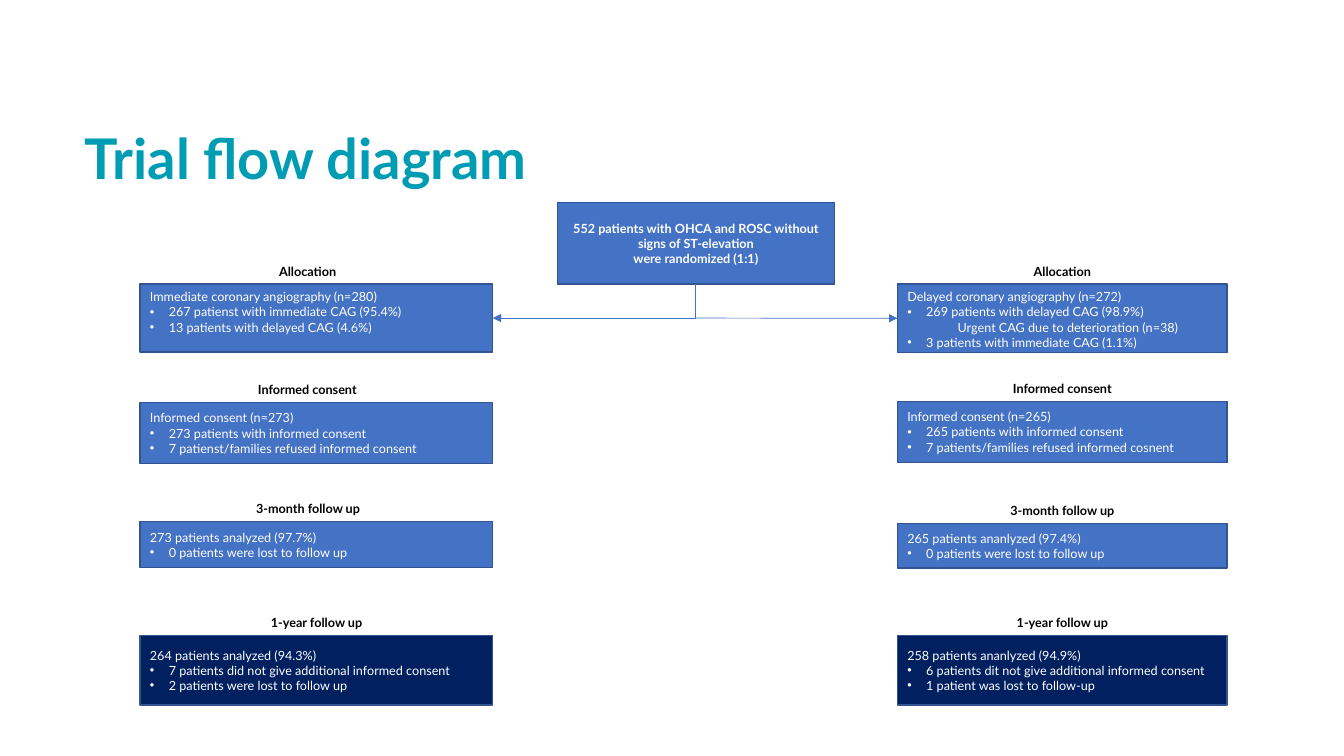
"""Build the trial flow diagram slide."""
from pptx import Presentation
from pptx.dml.color import RGBColor
from pptx.enum.shapes import MSO_CONNECTOR, MSO_SHAPE
from pptx.enum.text import MSO_ANCHOR, MSO_AUTO_SIZE, PP_ALIGN
from pptx.oxml.ns import qn
from pptx.util import Pt
from lxml.etree import SubElement

TEAL = RGBColor(0x00, 0x9C, 0xB4)
BLUE = RGBColor(0x44, 0x72, 0xC4)
EDGE = RGBColor(0x32, 0x54, 0x91)
NAVY = RGBColor(0x00, 0x20, 0x60)
WHITE = RGBColor(0xFF, 0xFF, 0xFF)
BLACK = RGBColor(0x00, 0x00, 0x00)

TITLE = "Trial flow diagram"
TITLE_AREA = (53.3, 86.4, 847.4, 58.3)
ROOT_AREA = (398, 144.7, 198, 58.3)
ROOT_LINES = [
    ("plain", "552 patients with OHCA and ROSC without signs of ST-elevation"),
    ("plain", "were randomized (1:1)"),
]
STAGES = [
    ("Allocation", BLUE, MSO_ANCHOR.TOP),
    ("Informed consent", BLUE, MSO_ANCHOR.MIDDLE),
    ("3-month follow up", BLUE, MSO_ANCHOR.MIDDLE),
    ("1-year follow up", NAVY, MSO_ANCHOR.MIDDLE),
]
ARMS = [
    {
        "left": 100, "width": 252,
        "boxes": [
            {"top": 203, "height": 48.4, "label_center": 219.7, "lines": [
                ("plain", "Immediate coronary angiography (n=280)"),
                ("bullet", "267 patienst with immediate CAG (95.4%)"),
                ("bullet", "13 patients with delayed CAG (4.6%)")]},
            {"top": 287.5, "height": 43.7, "label_center": 219.5, "lines": [
                ("plain", "Informed consent (n=273)"),
                ("bullet", "273 patients with informed consent"),
                ("bullet", "7 patienst/families refused informed consent")]},
            {"top": 372.6, "height": 33, "label_center": 220, "lines": [
                ("plain", "273 patients analyzed (97.7%)"),
                ("bullet", "0 patients were lost to follow up")]},
            {"top": 454, "height": 49.5, "label_center": 226.1, "lines": [
                ("plain", "264 patients analyzed (94.3%)"),
                ("bullet", "7 patients did not give additional informed consent"),
                ("bullet", "2 patients were lost to follow up")]},
        ],
    },
    {
        "left": 641, "width": 235.5,
        "boxes": [
            {"top": 203, "height": 48.7, "label_center": 758.8, "lines": [
                ("plain", "Delayed coronary angiography (n=272)"),
                ("bullet", "269 patients with delayed CAG (98.9%)"),
                ("nested", "Urgent CAG due to deterioration (n=38)"),
                ("bullet", "3 patients with immediate CAG (1.1%)")]},
            {"top": 286.6, "height": 43.7, "label_center": 758.8, "lines": [
                ("plain", "Informed consent (n=265)"),
                ("bullet", "265 patients with informed consent"),
                ("bullet", "7 patients/families refused informed cosnent")]},
            {"top": 374, "height": 31.7, "label_center": 758.8, "lines": [
                ("plain", "265 patients ananlyzed (97.4%)"),
                ("bullet", "0 patients were lost to follow up")]},
            {"top": 454, "height": 49.5, "label_center": 758.8, "lines": [
                ("plain", "258 patients ananlyzed (94.9%)"),
                ("bullet", "6 patients dit not give additional informed consent"),
                ("bullet", "1 patient was lost to follow-up")]},
        ],
    },
]
LABEL_WIDTH, LABEL_HEIGHT = 150, 18.2
BULLET_INDENT = Pt(13.5)


def apply(target, values):
    for name, value in values.items():
        setattr(target, name, value)


def points(*lengths):
    return [Pt(length) for length in lengths]


def write(frame, lines, font, align=PP_ALIGN.LEFT):
    for index, (kind, text) in enumerate(lines):
        paragraph = frame.paragraphs[0] if index == 0 else frame.add_paragraph()
        paragraph.text = text
        paragraph.alignment = align
        properties = paragraph._p.get_or_add_pPr()
        if kind == "bullet":
            properties.set("marL", str(BULLET_INDENT))
            properties.set("indent", str(-BULLET_INDENT))
            SubElement(properties, qn("a:buFont")).set("typeface", "Arial")
            SubElement(properties, qn("a:buChar")).set("char", "•")
        elif kind == "nested":
            paragraph.level = 1
            properties.set("marL", str(Pt(36)))
            properties.set("indent", "0")
        color = font["color"]
        for run in paragraph.runs:
            apply(run.font, {"name": "Lato", "size": Pt(font["size"]), "bold": font["bold"]})
            run.font.color.rgb = color


def add_box(slide, area, fill, lines, bold=False, anchor=MSO_ANCHOR.MIDDLE, align=PP_ALIGN.LEFT):
    shape = slide.shapes.add_shape(MSO_SHAPE.RECTANGLE, *points(*area))
    shape.shadow.inherit = False
    shape.fill.solid()
    shape.fill.fore_color.rgb = fill
    shape.line.color.rgb = EDGE
    shape.line.width = Pt(1)
    apply(shape.text_frame, {"word_wrap": True, "vertical_anchor": anchor})
    write(shape.text_frame, lines, {"size": 9, "bold": bold, "color": WHITE}, align)
    return shape


def add_label(slide, text, center, bottom):
    area = (center - LABEL_WIDTH / 2, bottom - LABEL_HEIGHT, LABEL_WIDTH, LABEL_HEIGHT)
    label = slide.shapes.add_textbox(*points(*area))
    apply(label.text_frame, {"word_wrap": True, "auto_size": MSO_AUTO_SIZE.SHAPE_TO_FIT_TEXT})
    write(label.text_frame, [("plain", text)], {"size": 9, "bold": True, "color": BLACK},
          PP_ALIGN.CENTER)


def add_arrow(slide, kind, begin, end):
    connector = slide.shapes.add_connector(kind, *begin, *end)
    connector.line.color.rgb = BLUE
    connector.line.width = Pt(0.5)
    properties = connector._element.spPr
    SubElement(properties.find(qn("a:ln")), qn("a:tailEnd")).set("type", "triangle")
    SubElement(properties, qn("a:effectLst"))
    return connector


def add_split(slide, root, left_box, right_box):
    center = root.left + root.width // 2
    bottom = root.top + root.height
    middle = left_box.top + left_box.height // 2
    elbow = add_arrow(slide, MSO_CONNECTOR.ELBOW, (center, bottom),
                      (left_box.left + left_box.width, middle))
    elbow.begin_connect(root, 2)
    elbow.end_connect(left_box, 3)
    geometry = elbow._element.spPr.find(qn("a:prstGeom"))
    guide = SubElement(geometry.find(qn("a:avLst")), qn("a:gd"))
    guide.set("name", "adj1")
    guide.set("fmla", "val 200")
    straight = add_arrow(slide, MSO_CONNECTOR.STRAIGHT, (center, middle),
                         (right_box.left, right_box.top + right_box.height // 2))
    straight.end_connect(right_box, 1)


def add_title(slide):
    title = slide.shapes.title
    apply(title, dict(zip(("left", "top", "width", "height"), points(*TITLE_AREA))))
    apply(title.text_frame, {"word_wrap": True, "auto_size": MSO_AUTO_SIZE.NONE,
                             "vertical_anchor": MSO_ANCHOR.MIDDLE})
    write(title.text_frame, [("plain", TITLE)], {"size": 40, "bold": True, "color": TEAL})
    title.text_frame.paragraphs[0].line_spacing = 0.9


def main():
    presentation = Presentation()
    apply(presentation, {"slide_width": Pt(960), "slide_height": Pt(540)})
    slide = presentation.slides.add_slide(presentation.slide_layouts[5])
    add_title(slide)
    root = add_box(slide, ROOT_AREA, BLUE, ROOT_LINES, bold=True, align=PP_ALIGN.CENTER)
    allocations = []
    for arm in ARMS:
        for (label, fill, anchor), box in zip(STAGES, arm["boxes"]):
            area = (arm["left"], box["top"], arm["width"], box["height"])
            shape = add_box(slide, area, fill, box["lines"], anchor=anchor)
            add_label(slide, label, box["label_center"], box["top"])
            if label == "Allocation":
                allocations.append(shape)
    add_split(slide, root, *allocations)
    presentation.save("out.pptx")


if __name__ == "__main__":
    main()
